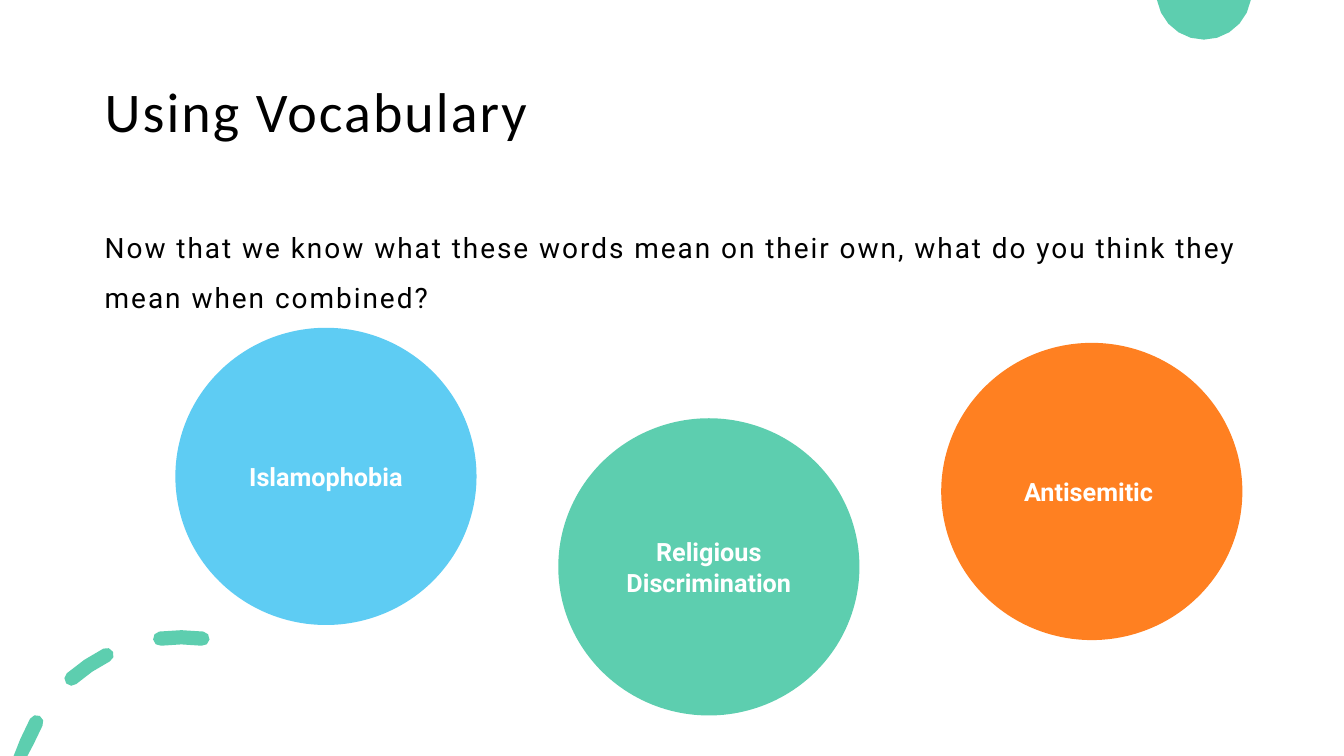
import math

import pptx
import pptx.dml.color
import pptx.enum.shapes
import pptx.enum.text
import pptx.util
from pptx.util import Cm

RGBColor = pptx.dml.color.RGBColor
Anchor = pptx.enum.text.MSO_ANCHOR
Align = pptx.enum.text.PP_ALIGN

GREEN = RGBColor(0x5D, 0xCE, 0xAF)
BLUE = RGBColor(0x5E, 0xCC, 0xF3)
ORANGE = RGBColor(0xFF, 0x80, 0x21)
BLACK = RGBColor(0, 0, 0)
WHITE = RGBColor(0xFF, 0xFF, 0xFF)

SLIDE_WIDTH, SLIDE_HEIGHT = 33.87, 19.05
TERMS = [
    ("Islamophobia", 8.26, BLUE),
    ("Religious Discrimination", 10.54, GREEN),
    ("Antisemitic ", 8.64, ORANGE),
]


def write(frame, text, *, size, font="Roboto", color=BLACK, bold=False,
          align=Align.LEFT, anchor=Anchor.TOP, line_spacing=1.0, tracking=0):
    """Put one formatted paragraph into a text frame."""
    frame.word_wrap = True
    frame.vertical_anchor = anchor
    paragraph = frame.paragraphs[0]
    paragraph.alignment = align
    paragraph.line_spacing = line_spacing
    run = paragraph.add_run()
    run.text = text
    run.font.size = pptx.util.Pt(size)
    run.font.name = font
    run.font.bold = bold
    run.font.color.rgb = color
    if tracking:
        run._r.get_or_add_rPr().set("spc", str(round(tracking * 100)))


def add_text(slide, text, top, height, **style):
    """Add a full-width text box with the slide's margins."""
    box = slide.shapes.add_textbox(Cm(2.34), Cm(top), Cm(29.21), Cm(height))
    frame = box.text_frame
    frame.margin_left = frame.margin_right = frame.margin_top = Cm(0.3)
    frame.margin_bottom = Cm(0.25)
    write(frame, text, **style)


def paint(shape, color):
    """Give a shape a plain fill without line or shadow."""
    shape.shadow.inherit = False
    shape.fill.solid()
    shape.fill.fore_color.rgb = color
    shape.line.fill.background()


def add_term(slide, term, left, top, color):
    """Add a coloured circle that holds a vocabulary term."""
    circle = slide.shapes.add_shape(
        pptx.enum.shapes.MSO_SHAPE.OVAL, Cm(left), Cm(top), Cm(7.59), Cm(7.49))
    paint(circle, color)
    write(circle.text_frame, term, size=18, color=WHITE, bold=True,
          align=Align.CENTER, anchor=Anchor.MIDDLE)


def arc(center, radius, start, end, steps):
    """Return points on an arc, with angles in degrees clockwise from right."""
    angles = [math.radians(start + (end - start) * i / steps) for i in range(steps + 1)]
    return [(center[0] + radius * math.cos(a), center[1] + radius * math.sin(a))
            for a in angles]


def dash(center, radius, half_width, start, end):
    """Return the outline of a round-capped arc, cut at the slide's bottom."""
    first_cap, last_cap = arc(center, radius, start, end, 1)
    outline = (arc(center, radius + half_width, end, start, 2)
               + arc(first_cap, half_width, start, start - 180, 4)[1:-1]
               + arc(center, radius - half_width, start, end, 2)
               + arc(last_cap, half_width, end + 180, end, 4)[1:-1])
    return [(x, min(y, SLIDE_HEIGHT)) for x, y in outline]


def add_outline(slide, contours, color):
    """Add one filled freeform made of closed contours."""
    contours = [[(Cm(x), Cm(y)) for x, y in points] for points in contours]
    builder = slide.shapes.build_freeform(*contours[0][0])
    for index, points in enumerate(contours):
        if index:
            builder.move_to(*points[0])
        builder.add_line_segments(points[1:], close=True)
    paint(builder.convert_to_shape(), color)


def main():
    """Build and save the vocabulary slide."""
    deck = pptx.Presentation()
    deck.slide_width, deck.slide_height = Cm(SLIDE_WIDTH), Cm(SLIDE_HEIGHT)
    slide = deck.slides.add_slide(deck.slide_layouts[6])

    add_outline(slide, [arc((30.34, -0.2), 1.2, 9.6, 170.4, 10)], GREEN)
    dashes = [dash((4.57, 20.25), 4.19, 0.18, middle - 7.3, middle + 7.3)
              for middle in (202, 236, 270)]
    add_outline(slide, dashes, GREEN)

    add_text(slide, "Using Vocabulary", 1.02, 3.68, size=40, font="Calibri",
             anchor=Anchor.MIDDLE, line_spacing=0.9, tracking=1.5)
    add_text(slide, "Now that we know what these words mean on their own, "
             "what do you think they mean when combined?", 5.08, 4.78,
             size=20, line_spacing=1.5, tracking=1.4)
    for column, (term, top, color) in enumerate(TERMS):
        add_term(slide, term, 4.42 + 9.65 * column, top, color)

    deck.save("out.pptx")


if __name__ == "__main__":
    main()
